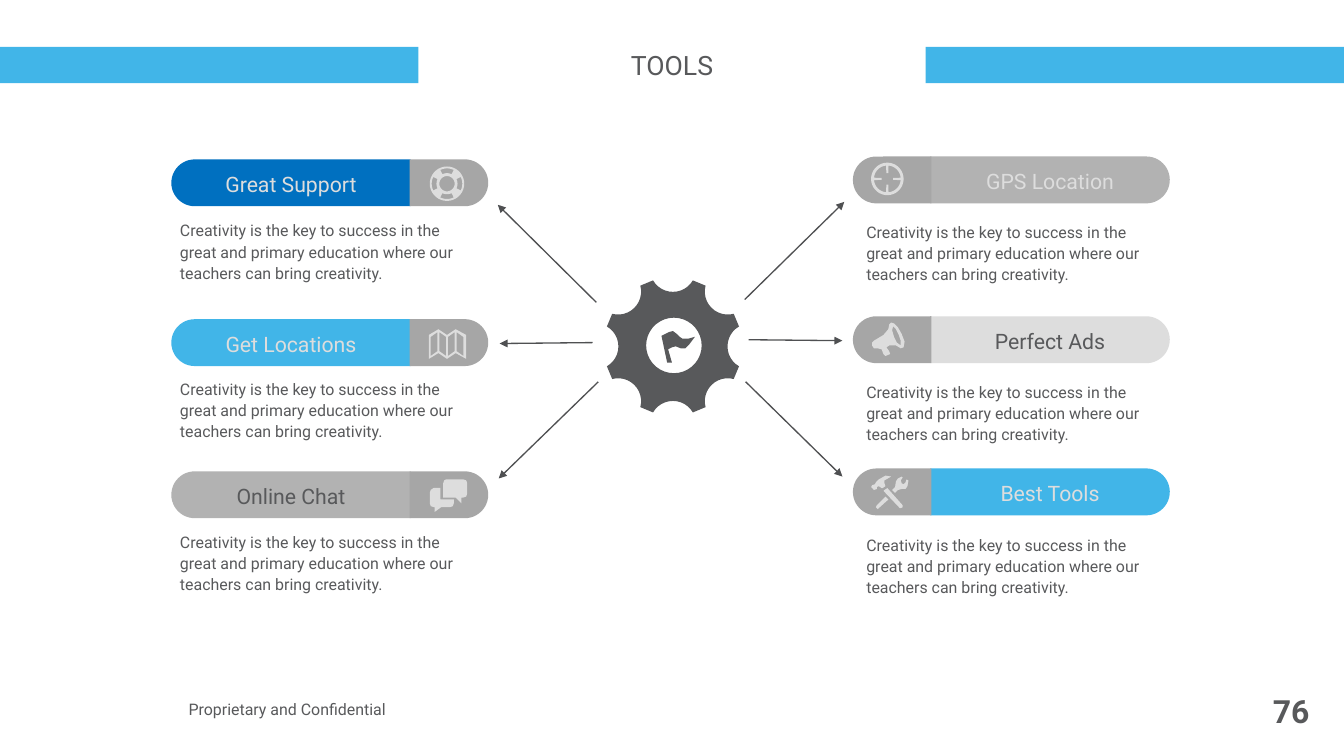
import math

import lxml.etree
import pptx
import pptx.dml.color
import pptx.enum.shapes
import pptx.enum.text
import pptx.oxml.ns
import pptx.util

Inches = pptx.util.Inches
RGB = pptx.dml.color.RGBColor.from_string
ALIGN = pptx.enum.text.PP_ALIGN
ANCHOR = pptx.enum.text.MSO_ANCHOR
SHAPE = pptx.enum.shapes.MSO_SHAPE

COLORS = {
    "sky": "41B5E8", "blue": "0070C0", "white": "FFFFFF", "ink": "58595B",
    "silver": "B2B2B2", "pale": "DDDDDD", "cap": "A6A6A6", "arrow": "4F5052",
}
DESCRIPTION = ("Creativity is the key to success in the great and primary education "
               "where our teachers can bring creativity.")

deck = pptx.Presentation()
deck.slide_width = Inches(14.04)
deck.slide_height = Inches(7.9)
page = deck.slides.add_slide(deck.slide_layouts[6])


def add_text(text, left, top, width, height, size, color="ink", inset=(0.04, 0.04),
             align=ALIGN.LEFT, anchor=ANCHOR.MIDDLE):
    box = page.shapes.add_textbox(Inches(left), Inches(top), Inches(width), Inches(height))
    frame = box.text_frame
    frame.word_wrap = True
    frame.vertical_anchor = anchor
    frame.margin_left = frame.margin_right = Inches(inset[0])
    frame.margin_top = frame.margin_bottom = Inches(inset[1])
    frame.text = text
    para = frame.paragraphs[0]
    para.alignment = align
    span = para.runs[0]
    span.font.name = "Roboto"
    span.font.size = pptx.util.Pt(size)
    span.font.color.rgb = RGB(COLORS[color])
    return box


def arc(x, y, radius, start=0, end=360):
    steps = max(1, math.ceil(abs(end - start) / 10))
    angles = [math.radians(start + (end - start) * i / steps) for i in range(steps + 1)]
    return [(x + radius * math.cos(a), y + radius * math.sin(a)) for a in angles]


# Header band with the title in its gap
band = page.shapes.add_shape(SHAPE.RECTANGLE, 0, Inches(0.49), deck.slide_width, Inches(0.38))
band.shadow.inherit = False
band.fill.solid()
band.fill.fore_color.rgb = RGB(COLORS["sky"])
band.line.fill.background()
title = add_text("TOOLS", 4.37, 0.41, 5.3, 0.54, 20, inset=(0.1, 0.1), align=ALIGN.CENTER)
title.fill.solid()
title.fill.fore_color.rgb = RGB(COLORS["white"])

# Footer
add_text("Proprietary and Confidential", 1.93, 7.09, 3.49, 0.65, 12)
number = add_text("76", 13.08, 7.22, 0.6, 0.41, 24, inset=(0, 0), align=ALIGN.RIGHT)
number.text_frame.paragraphs[0].runs[0].font.bold = True

# Cards: label, label colour, pill colour, pill middle, description top
left_cards = [
    ("Great Support", "pale", "blue", 1.91, 2.17),
    ("Get Locations", "pale", "sky", 3.58, 3.83),
    ("Online Chat", "ink", "silver", 5.17, 5.43),
]
right_cards = [
    ("GPS Location", "pale", "silver", 1.88, 2.19),
    ("Perfect Ads", "ink", "pale", 3.55, 3.86),
    ("Best Tools", "pale", "sky", 5.14, 5.46),
]
# Sides: cards, pill centre, cap centre, pill rotation, description left
sides = [(left_cards, 3.04, 4.69, 270, 1.64), (right_cards, 10.97, 9.32, 90, 8.81)]
for cards, pill_x, cap_x, rotation, description_left in sides:
    for label, label_color, pill_color, middle, description_top in cards:
        for center, length, color, turn in (
            (pill_x, 2.5, pill_color, rotation),
            (cap_x, 0.82, "cap", 360 - rotation),
        ):
            half = page.shapes.add_shape(
                SHAPE.ROUND_2_SAME_RECTANGLE, Inches(center - 0.245),
                Inches(middle - length / 2), Inches(0.49), Inches(length))
            half.adjustments[0] = 0.5
            half.rotation = turn
            half.shadow.inherit = False
            half.fill.solid()
            half.fill.fore_color.rgb = RGB(COLORS[color])
            half.line.fill.background()
        add_text(label, pill_x - 0.95, middle - 0.24, 1.9, 0.51, 16, label_color,
                 (0.1, 0.12), ALIGN.CENTER, ANCHOR.TOP)
        description = add_text(DESCRIPTION, description_left, description_top, 3.59, 0.91, 12,
                               inset=(0.24, 0.12), anchor=ANCHOR.TOP)
        description.text_frame.paragraphs[0].line_spacing = 1.1

# Arrows from the gear to the cards
arrows = [
    (6.23, 3.16, 5.2, 2.14), (6.19, 3.58, 5.22, 3.59), (6.25, 3.99, 5.21, 5),
    (7.78, 3.13, 8.82, 2.11), (7.82, 3.55, 8.8, 3.56), (7.79, 3.99, 8.8, 4.98),
]
for ends in arrows:
    arrow = page.shapes.add_connector(
        pptx.enum.shapes.MSO_CONNECTOR.STRAIGHT, *[Inches(value) for value in ends])
    arrow.line.color.rgb = RGB(COLORS["arrow"])
    arrow.line.width = pptx.util.Pt(1)
    tip = lxml.etree.SubElement(arrow.line._get_or_add_ln(), pptx.oxml.ns.qn("a:tailEnd"))
    tip.set("type", "triangle")
    lxml.etree.SubElement(arrow._element.spPr, pptx.oxml.ns.qn("a:effectLst"))

# Gear: eight round notches around a hole
gear = []
for angle in range(0, 360, 45):
    notch_x, notch_y = arc(7.03, 3.62, 0.81, angle, angle)[0]
    gear += arc(notch_x, notch_y, 0.24, angle + 240, angle + 120)
flag = [(6.91, 3.51), (6.97, 3.79), (7.02, 3.79), (6.98, 3.65), (7.02, 3.63), (7.06, 3.62),
        (7.11, 3.64), (7.16, 3.64), (7.2, 3.6), (7.26, 3.52), (7.19, 3.54), (7.13, 3.54),
        (7.1, 3.52), (7.07, 3.49), (7.03, 3.46), (6.99, 3.47)]

# Life buoy: four slots and a hole
buoy = [arc(4.67, 1.92, 0.18), arc(4.67, 1.92, 0.08)]
for angle in range(0, 360, 90):
    buoy.append(arc(4.67, 1.92, 0.16, angle - 26, angle + 26)
                + arc(4.67, 1.92, 0.11, angle + 26, angle - 26))

# Crosshair: four ticks reach into the ring
sight = []
for angle in range(0, 360, 90):
    sight += (arc(9.27, 1.87, 0.14, angle + 5, angle + 85)
              + arc(9.27, 1.87, 0.06, angle + 80, angle + 100))
crosshair = [arc(9.27, 1.87, 0.17), sight]

# Folded map: four slanted panels
folds = [(4.48, 3.5), (4.58, 3.44), (4.67, 3.5), (4.76, 3.44), (4.87, 3.5)]
road_map = [folds + [(x, y + 0.25) for x, y in reversed(folds)]]
for panel in range(4):
    x = 4.5 + 0.09 * panel
    start, end = (3.52, 3.47) if panel % 2 == 0 else (3.47, 3.52)
    road_map.append([(x, start), (x + 0.07, end), (x + 0.07, end + 0.2), (x, start + 0.2)])

chat = [
    [(4.6, 5.1), (4.53, 5.1), (4.5, 5.12), (4.49, 5.15), (4.49, 5.26), (4.5, 5.29),
     (4.53, 5.3), (4.54, 5.3), (4.54, 5.35), (4.61, 5.3), (4.7, 5.3), (4.73, 5.29),
     (4.74, 5.26), (4.74, 5.22), (4.6, 5.22)],
    [(4.66, 5.01), (4.64, 5.02), (4.63, 5.05), (4.63, 5.2), (4.76, 5.2), (4.82, 5.26),
     (4.82, 5.2), (4.84, 5.2), (4.87, 5.19), (4.88, 5.16), (4.88, 5.05), (4.87, 5.02),
     (4.84, 5.01)],
]
megaphone = [
    [(9.42, 3.49), (9.38, 3.42), (9.34, 3.38), (9.31, 3.37), (9.29, 3.39), (9.28, 3.44),
     (9.23, 3.5), (9.13, 3.56), (9.11, 3.58), (9.11, 3.61), (9.13, 3.64), (9.17, 3.64),
     (9.21, 3.65), (9.23, 3.7), (9.25, 3.72), (9.3, 3.7), (9.29, 3.67), (9.26, 3.63),
     (9.29, 3.61), (9.36, 3.61), (9.41, 3.64), (9.44, 3.63), (9.45, 3.57)],
    [(9.41, 3.61), (9.37, 3.58), (9.34, 3.52), (9.32, 3.45), (9.33, 3.41), (9.36, 3.44),
     (9.39, 3.5), (9.41, 3.56)],
]
tools = [
    [(9.16, 5.09), (9.18, 5.08), (9.21, 5.1), (9.22, 5.1), (9.25, 5.08), (9.24, 5.05),
     (9.24, 5.02), (9.31, 4.98), (9.25, 4.97), (9.18, 5.01), (9.15, 5.04), (9.14, 5.06),
     (9.11, 5.07), (9.1, 5.09), (9.13, 5.12), (9.16, 5.11)],
    [(9.27, 5.1), (9.24, 5.12), (9.23, 5.13), (9.4, 5.31), (9.41, 5.31), (9.43, 5.3),
     (9.43, 5.28)],
    [(9.49, 5.02), (9.47, 5.01), (9.46, 5.04), (9.44, 5.06), (9.42, 5.05), (9.41, 5.02),
     (9.43, 4.99), (9.42, 4.98), (9.38, 5), (9.36, 5.03), (9.35, 5.09), (9.32, 5.12),
     (9.35, 5.15), (9.38, 5.12), (9.42, 5.11), (9.46, 5.11), (9.48, 5.08)],
    [(9.16, 5.28), (9.15, 5.3), (9.17, 5.32), (9.18, 5.31), (9.28, 5.22), (9.25, 5.19)],
]

# Draw every icon as one outline with holes
icons = [([gear, arc(7.04, 3.61, 0.29)], "ink"), ([flag], "ink")]
icons += [(icon, "pale") for icon in (buoy, crosshair, road_map, chat, megaphone, tools)]
for contours, color in icons:
    builder = None
    for contour in contours:
        points = [(Inches(x), Inches(y)) for x, y in contour]
        if builder is None:
            builder = page.shapes.build_freeform(*points[0])
        else:
            builder.move_to(*points[0])
        builder.add_line_segments(points[1:], close=True)
    icon = builder.convert_to_shape()
    icon.shadow.inherit = False
    icon.fill.solid()
    icon.fill.fore_color.rgb = RGB(COLORS[color])
    icon.line.fill.background()

deck.save("out.pptx")
